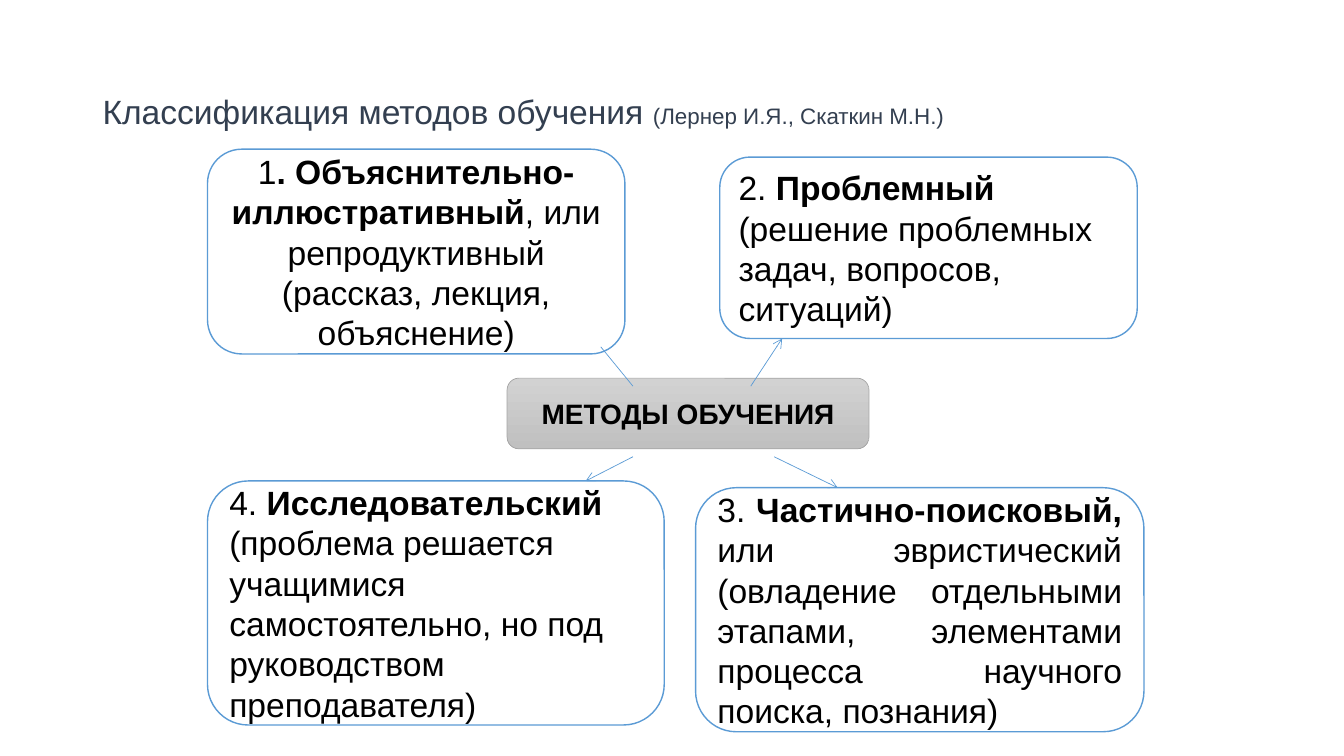
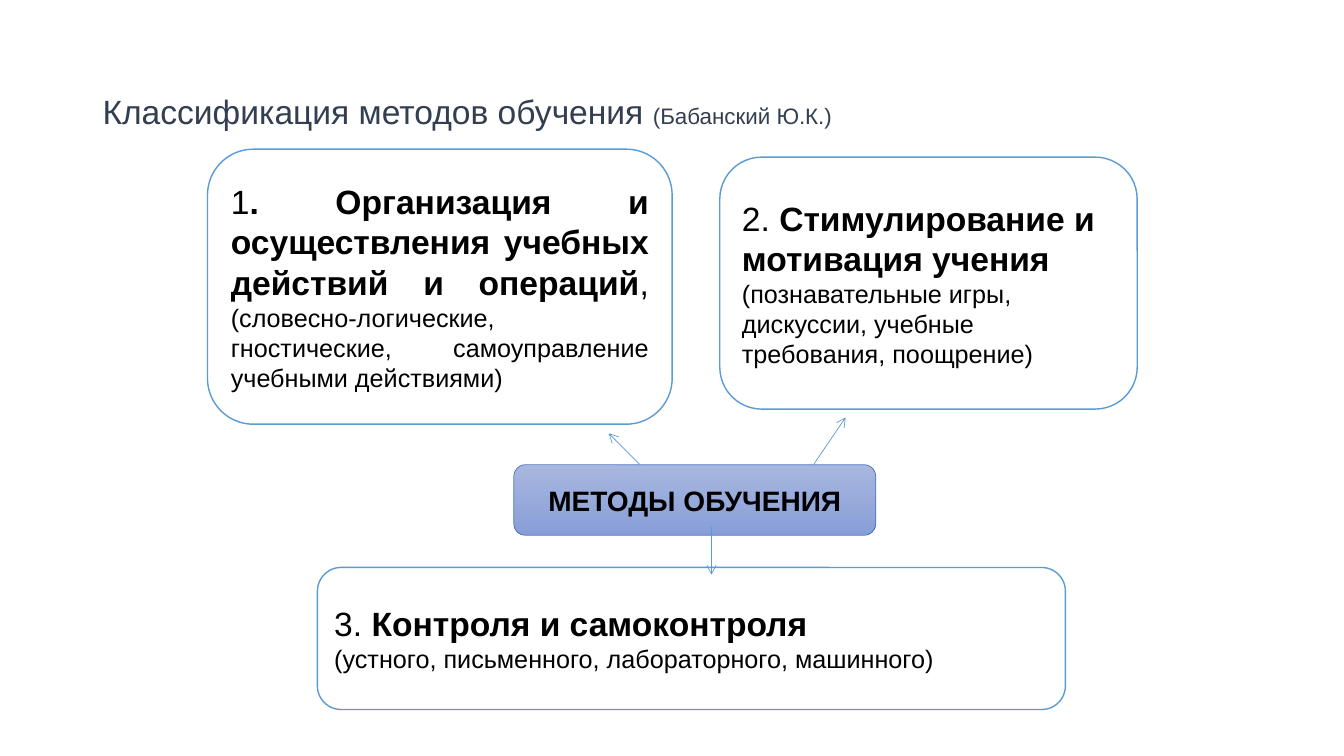
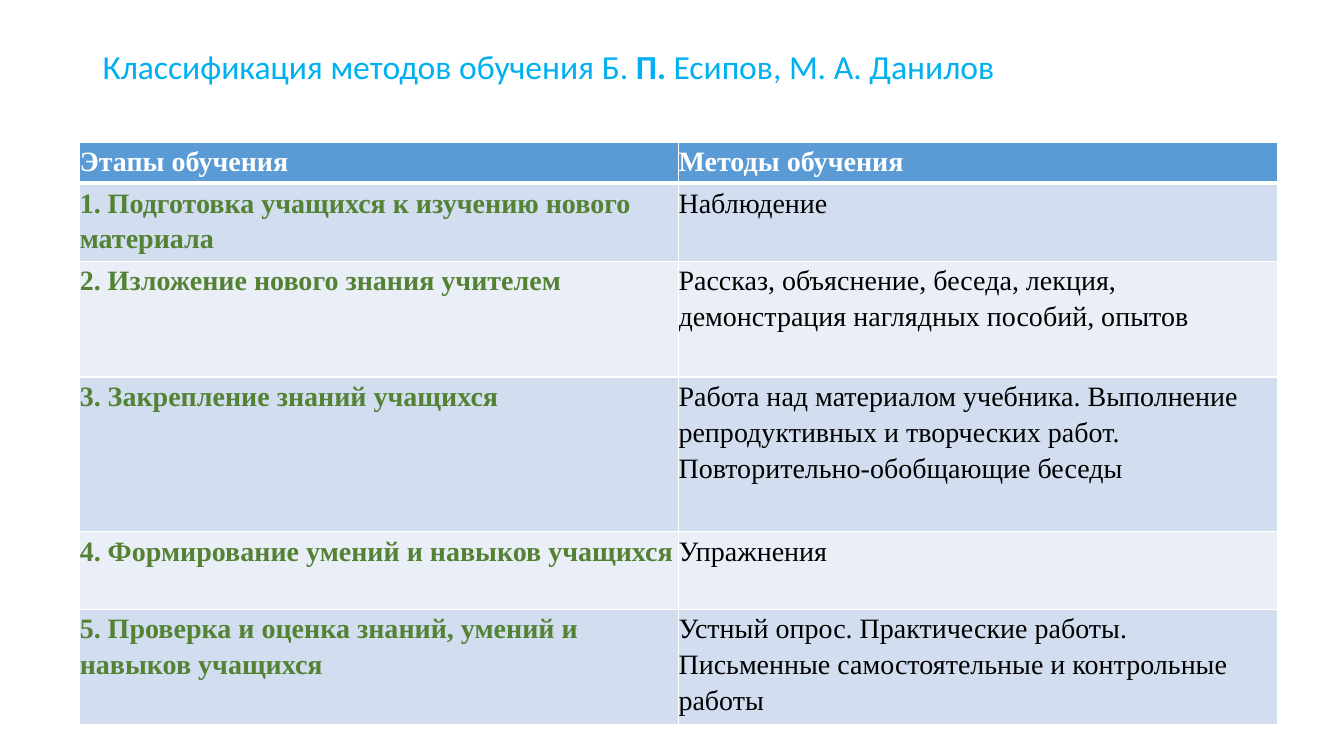
"""Build three slides on classifications of teaching methods."""
from dataclasses import dataclass

from lxml.etree import SubElement
from pptx import Presentation
from pptx.dml.color import RGBColor
from pptx.enum.shapes import MSO_CONNECTOR, MSO_SHAPE
from pptx.enum.text import MSO_ANCHOR, MSO_AUTO_SIZE, PP_ALIGN
from pptx.oxml.ns import qn
from pptx.util import Cm, Pt


@dataclass(frozen=True)
class Theme:
    slate: str = "333F50"
    sky: str = "00B0F0"
    blue: str = "5B9BD5"
    green: str = "548235"
    black: str = "000000"
    white: str = "FFFFFF"
    bands: tuple = ("D2DEEF", "EAEFF7")
    large: int = 24
    medium: int = 20
    small: int = 18
    note: int = 16
    sans: str = "Arial"
    heading: str = "Calibri"
    serif: str = "Times New Roman"
    box_line: float = 1
    thin_line: float = 0.5
    grid_line: float = 1
    header_line: float = 3


theme = Theme()


def style(name, size, color, bold=False):
    return {"name": name, "size": Pt(size), "bold": bold, "color": RGBColor.from_string(color)}


def write(paragraph, runs, alignment=PP_ALIGN.LEFT, spacing=1.0):
    paragraph.alignment = alignment
    paragraph.line_spacing = spacing
    for text, look in runs:
        run = paragraph.add_run()
        run.text = text
        for attribute, value in look.items():
            if attribute == "color":
                run.font.color.rgb = value
            else:
                setattr(run.font, attribute, value)


plain = style(theme.sans, theme.large, theme.black)
strong = style(theme.sans, theme.large, theme.black, True)
detail = style(theme.sans, theme.small, theme.black)
hub_text = style(theme.sans, theme.medium, theme.black, True)
title_text = style(theme.sans, theme.large, theme.slate)
title_note = style(theme.sans, theme.note, theme.slate)
sky_text = style(theme.heading, theme.large, theme.sky)
sky_strong = style(theme.heading, theme.large, theme.sky, True)
header_text = style(theme.serif, theme.medium, theme.white, True)
stage_text = style(theme.serif, theme.medium, theme.green, True)
method_text = style(theme.serif, theme.medium, theme.black)

topic = "Классификация методов обучения "
titles = [
    (3.68, [(topic, title_text), ("(Лернер И.Я., Скаткин М.Н.)", title_note)]),
    (3.68, [(topic, title_text), ("(Бабанский Ю.К.)", title_note)]),
    (1.4, [(topic + "Б.", sky_text), (" П.", sky_strong), (" Есипов, М. А. Данилов", sky_text)]),
]

diagrams = [
    {
        "methods": [
            ((5.23, 3.76, 10.52, 5.16), PP_ALIGN.CENTER, [[
                ("1", plain), (". Объяснительно-иллюстративный", strong),
                (", или репродуктивный (рассказ, лекция, объяснение)", plain)]]),
            ((18.14, 3.96, 10.52, 4.57), PP_ALIGN.LEFT, [[
                ("2. ", plain), ("Проблемный ", strong),
                ("(решение проблемных задач, вопросов, ситуаций)", plain)]]),
            ((17.53, 12.29, 11.3, 6.15), PP_ALIGN.JUSTIFY, [[
                ("3. ", plain), ("Частично-поисковый,", strong),
                (" или эвристический (овладение отдельными этапами, элементами "
                 "процесса научного поиска, познания)", plain)]]),
            ((5.23, 12.12, 11.51, 6.15), PP_ALIGN.LEFT, [[
                ("4. ", plain), ("Исследовательский ", strong),
                ("(проблема решается учащимися самостоятельно, но под "
                 "руководством преподавателя)", plain)]]),
        ],
        "hub": (12.78, 9.53),
        "hub_colors": ("D2D2D2", "C0C0C0", "A5A5A5"),
        "links": [
            ((18.92, 9.73, 19.71, 8.53), True),
            ((15.95, 9.73, 15.14, 8.74), False),
            ((19.51, 11.51, 21.11, 12.29), True),
            ((15.95, 11.51, 14.76, 12.12), True),
        ],
    },
    {
        "methods": [
            ((5.23, 3.76, 11.71, 6.93), PP_ALIGN.JUSTIFY, [[
                ("1", plain),
                (". Организация и осуществления учебных действий и операций", strong),
                (", ", plain),
                ("(словесно-логические, гностические, самоуправление "
                 "учебными действиями)", detail)]]),
            ((18.14, 3.96, 10.52, 6.35), PP_ALIGN.LEFT, [[
                ("2. ", plain), ("Стимулирование и мотивация учения ", strong),
                ("(познавательные игры, дискуссии, учебные требования, поощрение)", detail)]]),
            ((8, 14.3, 18.85, 3.58), PP_ALIGN.JUSTIFY, [
                [("3. ", plain), ("Контроля и самоконтроля", strong)],
                [("(устного, письменного, лабораторного, машинного)", detail)]]),
        ],
        "hub": (12.95, 11.71),
        "hub_colors": ("A8B7DF", "889ED7", "4472C4"),
        "links": [
            ((20.5, 11.71, 21.31, 10.52), True),
            ((17.93, 13.28, 17.93, 14.48), True),
            ((16.13, 11.71, 15.34, 10.92), True),
        ],
    },
]

stages = [
    (1.04, "Этапы обучения", "Методы обучения"),
    (1.96, "1. Подготовка учащихся к изучению нового материала", "Наблюдение"),
    (2.92, "2. Изложение нового знания учителем",
     "Рассказ, объяснение, беседа, лекция, демонстрация наглядных пособий, опытов"),
    (3.89, "3. Закрепление знаний учащихся",
     "Работа над материалом учебника. Выполнение репродуктивных и творческих работ. "
     "Повторительно-обобщающие беседы"),
    (1.96, "4. Формирование умений и навыков учащихся", "Упражнения"),
    (2.92, "5. Проверка и оценка знаний, умений и навыков учащихся",
     "Устный опрос. Практические работы. Письменные самостоятельные и контрольные работы"),
]

deck = Presentation()
deck.slide_width, deck.slide_height = Cm(33.87), Cm(19.05)

slides = []
for height, runs in titles:
    slide = deck.slides.add_slide(deck.slide_layouts[5])
    title = slide.shapes.title
    title.left, title.top, title.width, title.height = Cm(2.33), Cm(1.02), Cm(29.21), Cm(height)
    title.text_frame.auto_size = MSO_AUTO_SIZE.NONE
    title.text_frame.vertical_anchor = MSO_ANCHOR.MIDDLE
    write(title.text_frame.paragraphs[0], runs, spacing=0.9)
    slides.append(slide)

for slide, diagram in zip(slides, diagrams):
    hub_start, hub_end, hub_edge = diagram["hub_colors"]
    hub = ((*diagram["hub"], 9.12, 1.78), PP_ALIGN.CENTER, [[("МЕТОДЫ ОБУЧЕНИЯ", hub_text)]])
    for place, alignment, paragraphs in [*diagram["methods"], hub]:
        is_hub = place == hub[0]
        box = slide.shapes.add_shape(MSO_SHAPE.ROUNDED_RECTANGLE, *map(Cm, place))
        box.shadow.inherit = False
        if is_hub:
            box.fill.gradient()
            box.fill.gradient_angle = 270
            for stop, color in zip(box.fill.gradient_stops, (hub_start, hub_end)):
                stop.color.rgb = RGBColor.from_string(color)
        else:
            box.fill.solid()
            box.fill.fore_color.rgb = RGBColor.from_string(theme.white)
        box.line.color.rgb = RGBColor.from_string(hub_edge if is_hub else theme.blue)
        box.line.width = Pt(theme.thin_line if is_hub else theme.box_line)
        frame = box.text_frame
        frame.word_wrap = True
        frame.vertical_anchor = MSO_ANCHOR.MIDDLE
        for index, runs in enumerate(paragraphs):
            paragraph = frame.add_paragraph() if index else frame.paragraphs[0]
            write(paragraph, runs, alignment)

    for ends, has_arrow in diagram["links"]:
        link = slide.shapes.add_connector(MSO_CONNECTOR.STRAIGHT, *map(Cm, ends))
        link.line.color.rgb = RGBColor.from_string(theme.blue)
        link.line.width = Pt(theme.thin_line)
        properties = link._element.spPr
        if has_arrow:
            SubElement(properties.find(qn("a:ln")), qn("a:tailEnd"), type="arrow")
        SubElement(properties, qn("a:effectLst"))

table = slides[2].shapes.add_table(
    len(stages), 2, Cm(2.01), Cm(3.58), Cm(30.18), Cm(sum(stage[0] for stage in stages))).table
for row, (height, *texts) in enumerate(stages):
    table.rows[row].height = Cm(height)
    looks = (stage_text, method_text) if row else (header_text, header_text)
    fill = theme.bands[(row - 1) % 2] if row else theme.blue
    borders = {
        "a:lnL": theme.grid_line,
        "a:lnR": theme.grid_line,
        "a:lnT": theme.header_line if row == 1 else theme.grid_line,
        "a:lnB": theme.header_line if row == 0 else theme.grid_line,
    }
    for column, (text, look) in enumerate(zip(texts, looks)):
        cell = table.cell(row, column)
        for side in ("left", "top", "right", "bottom"):
            setattr(cell, f"margin_{side}", 0)
        for tag, width in borders.items():
            border = SubElement(cell._tc.get_or_add_tcPr(), qn(tag), w=str(Pt(width)))
            SubElement(SubElement(border, qn("a:solidFill")), qn("a:srgbClr"), val=theme.white)
        cell.fill.solid()
        cell.fill.fore_color.rgb = RGBColor.from_string(fill)
        write(cell.text_frame.paragraphs[0], [(text, look)], spacing=1.15)

deck.save("out.pptx")
